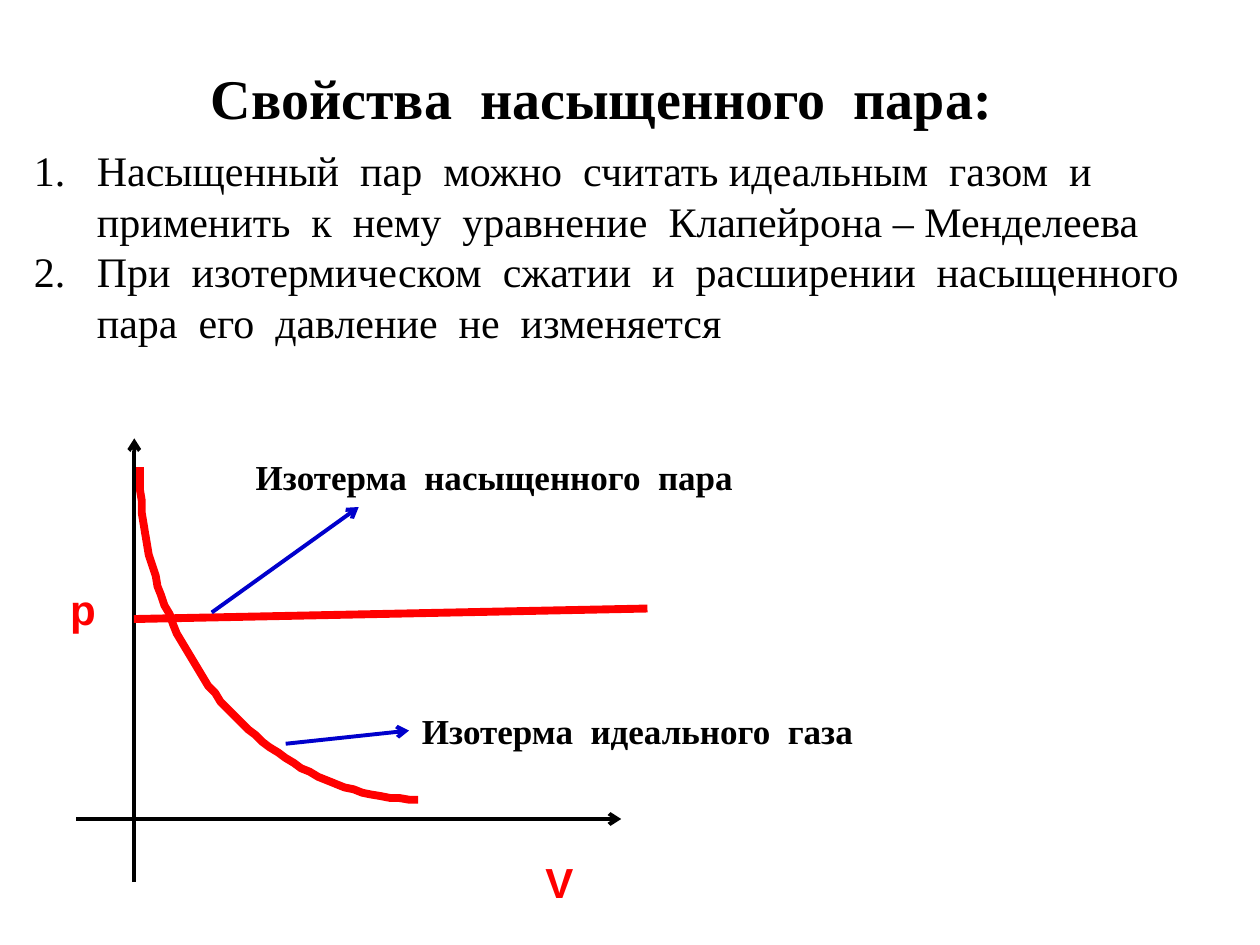
from dataclasses import dataclass

from lxml import etree
from pptx import Presentation
from pptx.dml.color import RGBColor
from pptx.enum.shapes import MSO_CONNECTOR
from pptx.enum.text import MSO_ANCHOR, MSO_AUTO_SIZE, PP_ALIGN
from pptx.oxml.ns import qn
from pptx.slide import Slide
from pptx.text.text import TextFrame, _Paragraph
from pptx.util import Pt

Point = tuple[float, float]


@dataclass(frozen=True)
class Theme:
    serif: str = "Times New Roman"
    sans: str = "Arial"
    ink: RGBColor = RGBColor(0, 0, 0)
    curve: RGBColor = RGBColor(0xFF, 0, 0)
    pointer: RGBColor = RGBColor(0, 0, 0xCC)
    title_size: float = 32
    body_size: float = 24
    label_size: float = 20
    thin: float = 2.25
    thick: float = 4.5


THEME = Theme()


@dataclass(frozen=True)
class Label:
    text: str
    left: float
    top: float
    width: float
    height: float
    font: str
    size: float
    color: RGBColor


@dataclass(frozen=True)
class Line:
    start: Point
    end: Point
    color: RGBColor
    weight: float = THEME.thin
    arrow: bool = True


PROPERTIES = [
    "Насыщенный  пар  можно  считать идеальным  газом  и  "
    "применить  к  нему  уравнение  Клапейрона – Менделеева",
    "При  изотермическом  сжатии  и  расширении  насыщенного  "
    "пара  его  давление  не  изменяется",
]

LABELS = [
    Label("р", 33, 330, 30, 36.5, THEME.sans, THEME.body_size, THEME.curve),
    Label("V", 304.5, 486, 51, 36.5, THEME.sans, THEME.body_size, THEME.curve),
    Label("Изотерма  насыщенного  пара", 139, 257, 342, 31.5,
          THEME.serif, THEME.label_size, THEME.ink),
    Label("Изотерма  идеального  газа", 234, 402, 353, 31.5,
          THEME.serif, THEME.label_size, THEME.ink),
]

AXES = [
    Line((76.75, 504), (76.75, 250.5), THEME.ink),
    Line((43.5, 468), (355, 468), THEME.ink),
]
SATURATED_ISOTHERM = Line((76.5, 353.75), (370, 347.75), THEME.curve,
                          THEME.thick, arrow=False)
POINTERS = [
    Line((121, 350), (205, 289.75), THEME.pointer),
    Line((163.25, 425), (233.75, 417.5), THEME.pointer),
]
IDEAL_ISOTHERM = [(239.25, 457), (151, 455.75), (79.75, 371), (79.75, 267)]


def style(paragraph: _Paragraph, font: str, size: float, color: RGBColor,
          bold: bool = True) -> None:
    paragraph.font.name = font
    paragraph.font.size = Pt(size)
    paragraph.font.color.rgb = color
    paragraph.font.bold = bold


def add_text_frame(slide: Slide, left: float, top: float,
                   width: float, height: float) -> TextFrame:
    frame = slide.shapes.add_textbox(
        Pt(left), Pt(top), Pt(width), Pt(height)).text_frame
    frame.word_wrap = True
    return frame


def add_title(slide: Slide, text: str) -> None:
    title = slide.shapes.title
    title.left, title.top, title.width, title.height = (
        Pt(48), Pt(30.25), Pt(582), Pt(51))
    frame = title.text_frame
    frame.text = text
    frame.auto_size = MSO_AUTO_SIZE.NONE
    frame.vertical_anchor = MSO_ANCHOR.MIDDLE
    frame.margin_left = Pt(17)
    heading = frame.paragraphs[0]
    heading.alignment = PP_ALIGN.CENTER
    style(heading, THEME.serif, THEME.title_size, THEME.ink)


def add_properties(slide: Slide) -> None:
    frame = add_text_frame(slide, 12.25, 79.25, 686, 152.5)
    for index, text in enumerate(PROPERTIES):
        item = frame.paragraphs[0] if index == 0 else frame.add_paragraph()
        item.text = text
        layout = item._p.get_or_add_pPr()
        layout.set("marL", str(Pt(36)))
        layout.set("indent", str(Pt(-36)))
        etree.SubElement(layout, qn("a:buAutoNum"), type="arabicPeriod")
        style(item, THEME.serif, THEME.body_size, THEME.ink, bold=False)


def add_label(slide: Slide, label: Label) -> None:
    frame = add_text_frame(slide, label.left, label.top, label.width, label.height)
    frame.text = label.text
    style(frame.paragraphs[0], label.font, label.size, label.color)


def add_line(slide: Slide, line: Line) -> None:
    connector = slide.shapes.add_connector(
        MSO_CONNECTOR.STRAIGHT, *map(Pt, line.start + line.end))
    connector.line.color.rgb = line.color
    connector.line.width = Pt(line.weight)
    if line.arrow:
        etree.SubElement(connector.line._get_or_add_ln(), qn("a:tailEnd"), type="arrow")
    etree.SubElement(connector._element.spPr, qn("a:effectLst"))


def bezier_point(controls: list[Point], t: float) -> Point:
    weights = ((1 - t) ** 3, 3 * t * (1 - t) ** 2, 3 * t ** 2 * (1 - t), t ** 3)
    x, y = (sum(w * c for w, c in zip(weights, axis)) for axis in zip(*controls))
    return x, y


def add_curve(slide: Slide, controls: list[Point], steps: int = 48) -> None:
    points = [bezier_point(controls, step / steps) for step in range(steps + 1)]
    builder = slide.shapes.build_freeform(*points[0], scale=Pt(1))
    builder.add_line_segments(points[1:], close=False)
    curve = builder.convert_to_shape()
    curve.fill.background()
    curve.line.color.rgb = THEME.curve
    curve.line.width = Pt(THEME.thick)
    curve.shadow.inherit = False


def main() -> None:
    presentation = Presentation()
    presentation.slide_width, presentation.slide_height = Pt(720), Pt(540)
    slide = presentation.slides.add_slide(presentation.slide_layouts[5])
    add_title(slide, "Свойства  насыщенного  пара:")
    add_properties(slide)
    for axis in AXES:
        add_line(slide, axis)
    add_curve(slide, IDEAL_ISOTHERM)
    add_line(slide, SATURATED_ISOTHERM)
    for label in LABELS:
        add_label(slide, label)
    for pointer in POINTERS:
        add_line(slide, pointer)
    presentation.save("out.pptx")


if __name__ == "__main__":
    main()
